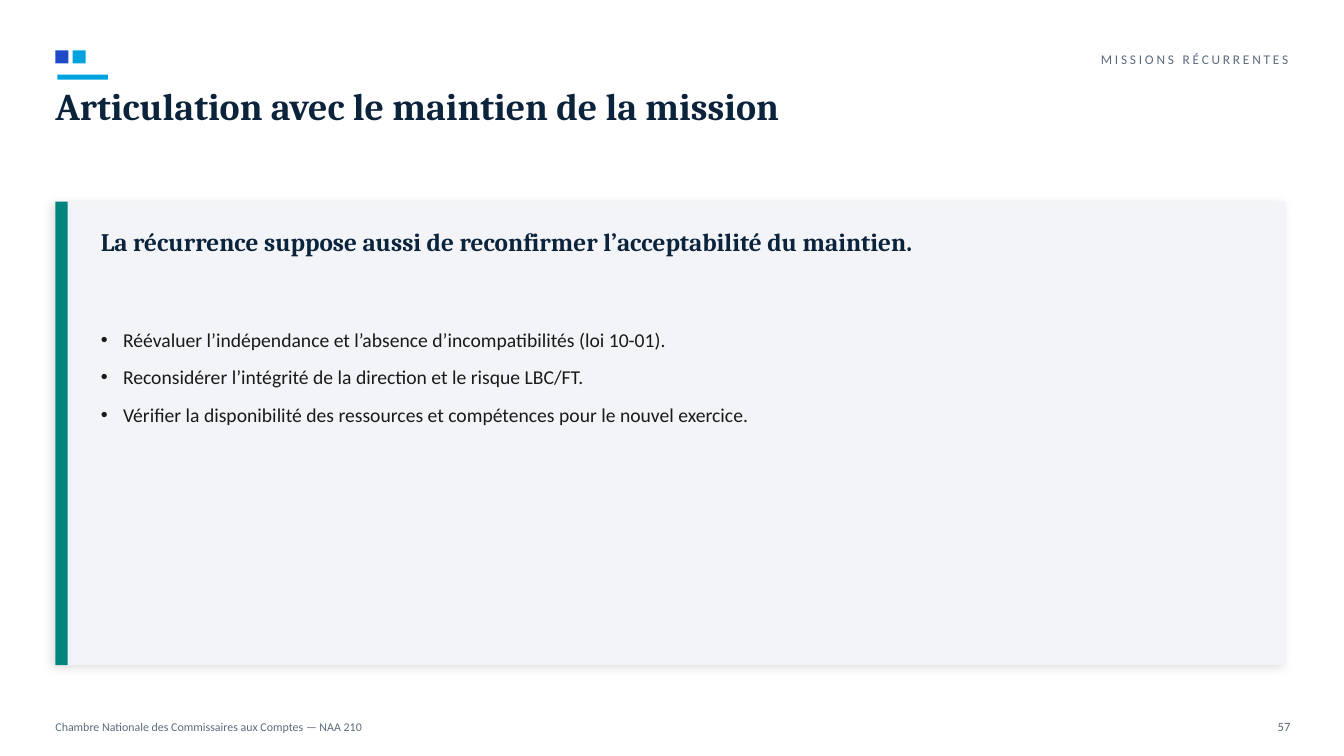
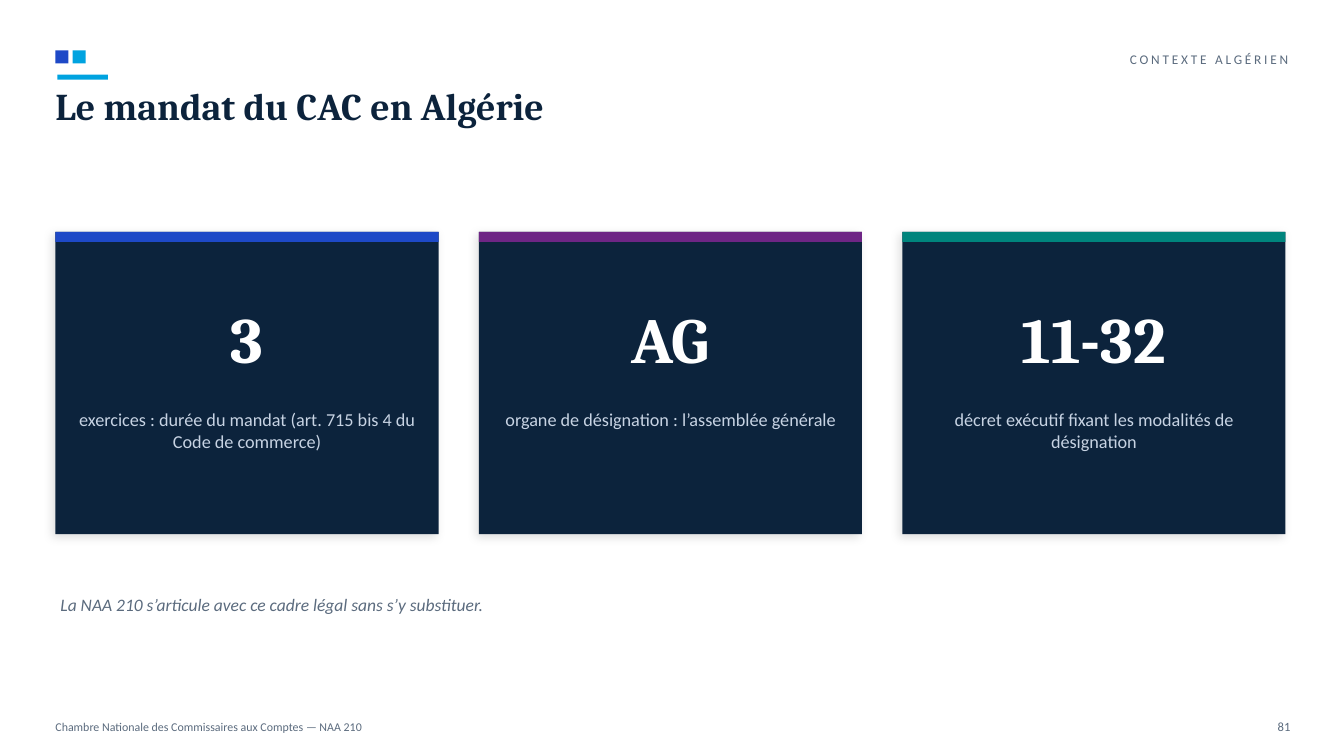
"""Build two slides on recurring engagements and the statutory auditor's mandate."""
from lxml import etree
from pptx import Presentation
from pptx.dml.color import RGBColor
from pptx.enum.shapes import MSO_SHAPE
from pptx.enum.text import MSO_ANCHOR, MSO_AUTO_SIZE, PP_ALIGN
from pptx.oxml.ns import qn
from pptx.util import Inches, Pt

RECTANGLE = MSO_SHAPE.RECTANGLE
TOP, MIDDLE = MSO_ANCHOR.TOP, MSO_ANCHOR.MIDDLE
LEFT, CENTER, RIGHT = PP_ALIGN.LEFT, PP_ALIGN.CENTER, PP_ALIGN.RIGHT
NO_AUTOFIT = MSO_AUTO_SIZE.NONE

WHITE = RGBColor(0xFF, 0xFF, 0xFF)
NAVY = RGBColor(0x0C, 0x23, 0x3C)
BLUE = RGBColor(0x1E, 0x49, 0xC7)
CYAN = RGBColor(0x00, 0xA3, 0xE0)
TEAL = RGBColor(0x00, 0x85, 0x7D)
PURPLE = RGBColor(0x6E, 0x25, 0x85)
PALE_GREY = RGBColor(0xF2, 0xF4, 0xF7)
PALE_BLUE = RGBColor(0xC7, 0xD3, 0xE3)
SLATE = RGBColor(0x5B, 0x6B, 0x7E)
INK = RGBColor(0x1A, 0x1A, 0x1A)

HEADING_FONT, BODY_FONT = "Cambria", "Calibri"
MARGIN, CONTENT_WIDTH = 0.55, 12.2
FOOTER = "Chambre Nationale des Commissaires aux Comptes — NAA 210"


def add_block(page, left, top, width, height, color, shadow=False):
    block = page.shapes.add_shape(
        RECTANGLE, Inches(left), Inches(top), Inches(width), Inches(height))
    block.fill.solid()
    block.fill.fore_color.rgb = color
    block.line.fill.background()
    block.shadow.inherit = False
    if shadow:
        effects = block.element.spPr.find(qn("a:effectLst"))
        outer = etree.SubElement(
            effects, qn("a:outerShdw"), blurRad=str(Pt(7)), dist=str(Pt(3)),
            dir=str(135 * 60000), algn="bl", rotWithShape="0")
        black = etree.SubElement(outer, qn("a:srgbClr"), val="000000")
        etree.SubElement(black, qn("a:alpha"), val="12000")


def write(page, left, top, width, height, text, size, color, font=BODY_FONT,
          align=LEFT, anchor=TOP, bold=False, italic=False, spacing=0, box=None):
    place = Inches(left), Inches(top), Inches(width), Inches(height)
    if box is None:
        box = page.shapes.add_textbox(*place)
    else:
        box.left, box.top, box.width, box.height = place
    frame = box.text_frame
    frame.text = text
    frame.word_wrap = True
    frame.auto_size = NO_AUTOFIT
    frame.vertical_anchor = anchor
    frame.margin_left = frame.margin_top = frame.margin_right = frame.margin_bottom = 0
    for paragraph in frame.paragraphs:
        paragraph.alignment = align
        paragraph.space_before = Pt(0)
        for span in paragraph.runs:
            span.font.name = font
            span.font.size = Pt(size)
            span.font.bold = bold
            span.font.italic = italic
            span.font.color.rgb = color
            if spacing:
                span.font._element.set("spc", str(spacing * 100))
    return box


deck = Presentation()
deck.slide_width, deck.slide_height = Inches(13.33), Inches(7.5)
content_layout, title_layout = deck.slide_layouts[1], deck.slide_layouts[5]

pages = []
for layout, section, title, number in [
    (content_layout, "MISSIONS RÉCURRENTES", "Articulation avec le maintien de la mission", "57"),
    (title_layout, "CONTEXTE ALGÉRIEN", "Le mandat du CAC en Algérie", "81"),
]:
    page = deck.slides.add_slide(layout)
    page.background.fill.solid()
    page.background.fill.fore_color.rgb = WHITE
    add_block(page, MARGIN, 0.5, 0.13, 0.13, BLUE)
    add_block(page, 0.72, 0.5, 0.13, 0.13, CYAN)
    add_block(page, 0.57, 0.74, 0.5, 0.05, CYAN)
    write(page, 7, 0.46, 5.78, 0.26, section, 9.5, SLATE,
          align=RIGHT, anchor=MIDDLE, spacing=2)
    write(page, MARGIN, 7.06, 9, 0.3, FOOTER, 8.5, SLATE, anchor=MIDDLE)
    write(page, 12.2, 7.06, 0.6, 0.3, number, 9, SLATE, align=RIGHT, anchor=MIDDLE)
    write(page, MARGIN, 0.82, CONTENT_WIDTH, 0.9, title, 27, NAVY, HEADING_FONT,
          bold=True, box=page.shapes.title)
    pages.append(page)

continuation, mandate = pages

add_block(continuation, MARGIN, 2, CONTENT_WIDTH, 4.6, PALE_GREY, shadow=True)
add_block(continuation, MARGIN, 2, 0.12, 4.6, TEAL)
write(continuation, 1, 2.25, 11.4, 0.9,
      "La récurrence suppose aussi de reconfirmer l’acceptabilité du maintien.",
      18, NAVY, HEADING_FONT, bold=True)
checks = [
    "Réévaluer l’indépendance et l’absence d’incompatibilités (loi 10-01).",
    "Reconsidérer l’intégrité de la direction et le risque LBC/FT.",
    "Vérifier la disponibilité des ressources et compétences pour le nouvel exercice.",
]
checklist = write(continuation, 1, 3.25, 11.4, 3.1, "\n".join(checks), 14, INK,
                  box=continuation.placeholders[1])
continuation.shapes.element.append(checklist.element)
for paragraph in checklist.text_frame.paragraphs:
    properties = paragraph._p.get_or_add_pPr()
    properties.set("marL", str(Inches(0.22)))
    properties.set("indent", str(-Inches(0.22)))
    paragraph.space_after = Pt(10)

card_width, card_gap, card_top = 3.8, 0.4, 2.3
cards = [
    ("3", "exercices : durée du mandat (art. 715 bis 4 du Code de commerce)", BLUE),
    ("AG", "organe de désignation : l’assemblée générale", PURPLE),
    ("11-32", "décret exécutif fixant les modalités de désignation", TEAL),
]
for index, (figure, caption, accent) in enumerate(cards):
    left = MARGIN + index * (card_width + card_gap)
    add_block(mandate, left, card_top, card_width, 3, NAVY, shadow=True)
    add_block(mandate, left, card_top, card_width, 0.1, accent)
    write(mandate, left, 2.7, card_width, 1.3, figure, 46, WHITE, HEADING_FONT,
          align=CENTER, anchor=MIDDLE, bold=True)
    write(mandate, left + 0.2, 4.05, card_width - 0.4, 1.1, caption, 13, PALE_BLUE,
          align=CENTER)
write(mandate, 0.6, 5.6, 12.1, 0.8,
      "La NAA 210 s’articule avec ce cadre légal sans s’y substituer.",
      12.5, SLATE, anchor=MIDDLE, italic=True)

deck.save("out.pptx")
